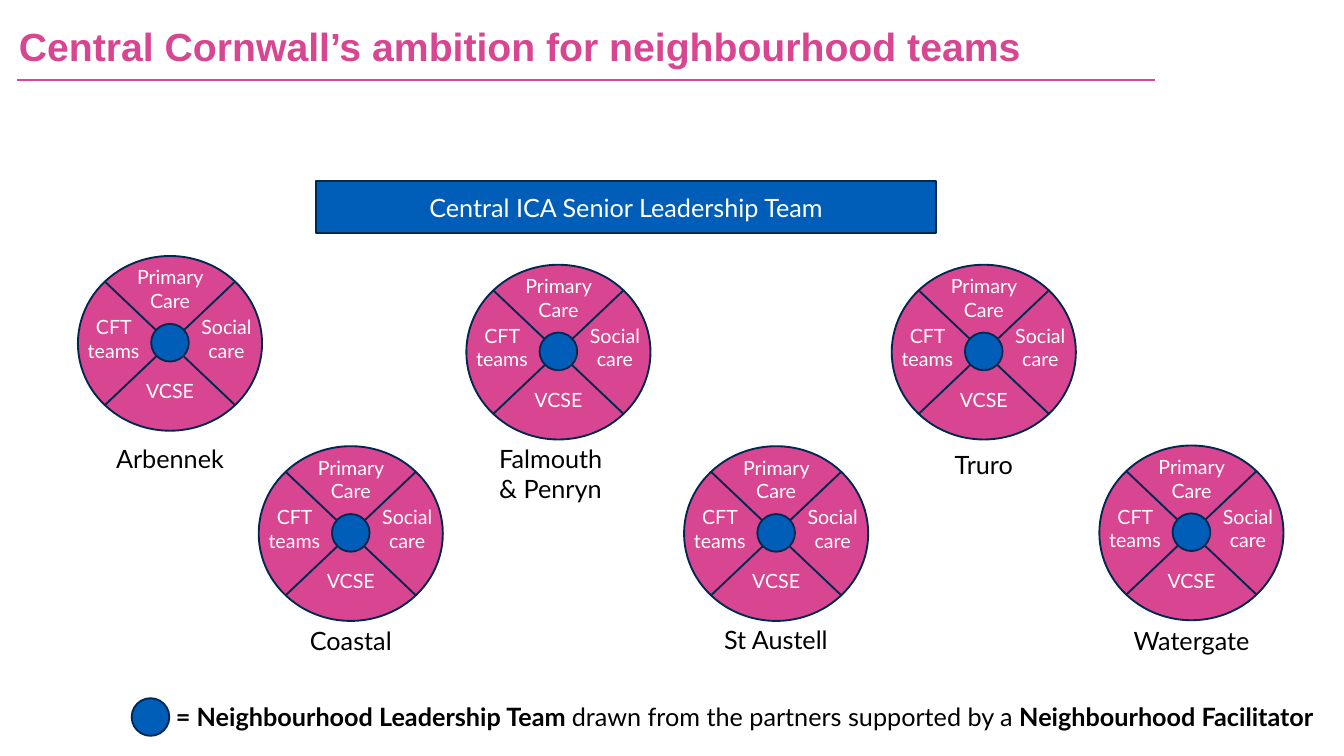
from pptx import Presentation
from pptx.dml.color import RGBColor
from pptx.enum.shapes import MSO_CONNECTOR, MSO_SHAPE
from pptx.enum.text import MSO_ANCHOR, MSO_AUTO_SIZE, PP_ALIGN
from pptx.oxml.ns import qn
from pptx.util import Inches, Pt
from lxml.etree import SubElement

PINK, BLUE, NAVY = "D84692", "005EB8", "002951"
WHITE, BLACK = "FFFFFF", "000000"

WHEEL_WIDTH, WHEEL_HEIGHT, HUB = 2.74, 2.6, 0.56

# Text, then centre x, top and height of its box within the wheel
SECTORS = [
    ("Primary Care", 1.37, 0.09, 0.81),
    ("CFT teams", 0.53, 0.83, 0.81),
    ("Social care", 2.21, 0.83, 0.81),
    ("VCSE", 1.37, 1.78, 0.45),
]

# Wheel left and top, then name, its box and its alignment
NEIGHBOURHOODS = [
    (1.16, 3.81, "Arbennek", (1.46, 6.55, 2.14, 0.56), PP_ALIGN.CENTER),
    (3.85, 6.64, "Coastal", (4.33, 9.26, 1.78, 0.56), PP_ALIGN.CENTER),
    (6.94, 3.94, "Falmouth & Penryn", (7.33, 6.55, 1.92, 1.01), PP_ALIGN.LEFT),
    (10.18, 6.64, "St Austell", (10.42, 9.24, 2.25, 0.56), PP_ALIGN.CENTER),
    (13.27, 3.94, "Truro", (13.75, 6.64, 1.78, 0.56), PP_ALIGN.CENTER),
    (16.36, 6.63, "Watergate", (16.67, 9.26, 2.12, 0.56), PP_ALIGN.CENTER),
]


def rgb(value):
    return RGBColor.from_string(value)


def box_inches(box):
    return [Inches(length) for length in box]


def format_font(font, size, color, name="Lato", bold=False):
    font.size, font.name, font.bold = Pt(size), name, bold
    font.color.rgb = rgb(color)


def add_filled_shape(shapes, preset, box, fill):
    shape = shapes.add_shape(preset, *box_inches(box))
    shape.shadow.inherit = False
    shape.fill.solid()
    shape.fill.fore_color.rgb = rgb(fill)
    shape.line.color.rgb = rgb(NAVY)
    shape.line.width = Pt(2)
    return shape


def add_text(shapes, box, parts, size, color, alignment=PP_ALIGN.CENTER):
    """Add a wrapped text box whose parts are pairs of text and bold."""
    text_frame = shapes.add_textbox(*box_inches(box)).text_frame
    text_frame.word_wrap = True
    text_frame.auto_size = MSO_AUTO_SIZE.SHAPE_TO_FIT_TEXT
    paragraph = text_frame.paragraphs[0]
    paragraph.alignment = alignment
    for text, bold in parts:
        run = paragraph.add_run()
        run.text = text
        format_font(run.font, size, color, bold=bold)


def add_title(slide, box):
    left, top, width, height = box
    title = slide.shapes.title
    title.left, title.top, title.width, title.height = box_inches(box)
    text_frame = title.text_frame
    text_frame.text = "Central Cornwall’s ambition for neighbourhood teams"
    text_frame.auto_size = MSO_AUTO_SIZE.NONE
    text_frame.vertical_anchor = MSO_ANCHOR.MIDDLE
    text_frame.margin_left = text_frame.margin_right = Inches(0.15)
    text_frame.margin_top = text_frame.margin_bottom = Inches(0.15)
    paragraph = text_frame.paragraphs[0]
    paragraph.alignment = PP_ALIGN.LEFT
    paragraph.line_spacing = 0.9
    format_font(paragraph.runs[0].font, 42, PINK, "Arial", True)

    bottom = top + height
    rule = slide.shapes.add_connector(
        MSO_CONNECTOR.STRAIGHT,
        *box_inches((left + 0.13, bottom, left + width - 0.5, bottom)))
    rule.line.color.rgb = rgb(PINK)
    rule.line.width = Pt(1.5)
    SubElement(rule._element.spPr, qn("a:effectLst"))


def add_leadership_bar(slide, box):
    bar = add_filled_shape(slide.shapes, MSO_SHAPE.RECTANGLE, box, BLUE)
    text_frame = bar.text_frame
    text_frame.text = "Central ICA Senior Leadership Team"
    text_frame.vertical_anchor = MSO_ANCHOR.MIDDLE
    paragraph = text_frame.paragraphs[0]
    paragraph.alignment = PP_ALIGN.CENTER
    format_font(paragraph.runs[0].font, 27, WHITE)


def add_wheel(slide, left, top):
    """Add a grouped wheel of four partners around a leadership hub."""
    shapes = slide.shapes.add_group_shape().shapes
    add_filled_shape(shapes, MSO_SHAPE.FLOWCHART_SUMMING_JUNCTION,
                     (left, top, WHEEL_WIDTH, WHEEL_HEIGHT), PINK)
    text_width = 1.41
    for text, center, offset, height in SECTORS:
        box = (left + center - text_width / 2, top + offset, text_width, height)
        add_text(shapes, box, [(text, False)], 21, WHITE)
    hub_left = left + (WHEEL_WIDTH - HUB) / 2
    hub_top = top + (WHEEL_HEIGHT - HUB) / 2 - 0.01
    add_filled_shape(shapes, MSO_SHAPE.OVAL, (hub_left, hub_top, HUB, HUB), BLUE)


def add_legend(slide, box):
    left, top, width, height = box
    add_filled_shape(slide.shapes, MSO_SHAPE.OVAL, (left, top, HUB, HUB), BLUE)
    parts = [
        ("= Neighbourhood Leadership Team ", True),
        ("drawn from the partners supported by a ", False),
        ("Neighbourhood Facilitator", True),
    ]
    add_text(slide.shapes, (left + HUB, top - 0.01, width - HUB, height),
             parts, 27, BLACK, PP_ALIGN.LEFT)


def main():
    presentation = Presentation()
    presentation.slide_width = Inches(20)
    presentation.slide_height = Inches(11.25)
    slide = presentation.slides.add_slide(presentation.slide_layouts[5])
    add_title(slide, (0.13, 0.25, 17.56, 0.94))
    for left, top, name, name_box, alignment in NEIGHBOURHOODS:
        add_wheel(slide, left, top)
        add_text(slide.shapes, name_box, [(name, False)], 27, BLACK, alignment)
    add_leadership_bar(slide, (4.7, 2.69, 9.23, 0.78))
    add_legend(slide, (1.96, 10.39, 17.86, 0.56))
    presentation.save("out.pptx")


if __name__ == "__main__":
    main()
